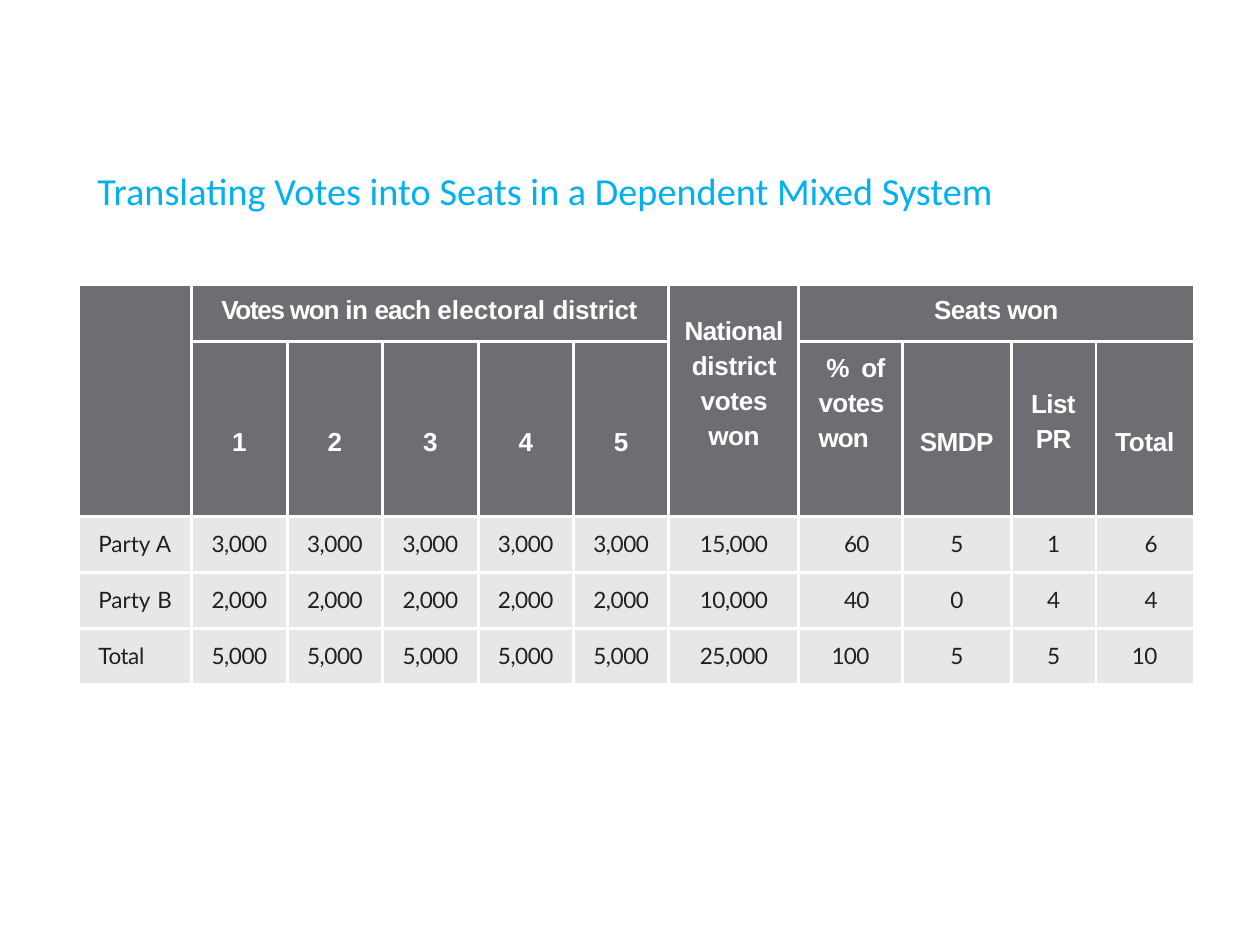
"""Build a slide with a table that translates votes into seats."""
from dataclasses import dataclass

from lxml import etree
from pptx import Presentation
from pptx import util as u
from pptx.dml.color import RGBColor
from pptx.enum import text
from pptx.oxml import ns

COLORS = {
    "title": "00B0F0",
    "header": "6D6E71",
    "header_text": "FFFFFF",
    "body": "E6E7E8",
    "body_text": "231F20",
    "border": "FFFFFF",
}
LEFT, CENTER, JUSTIFY = text.PP_ALIGN.LEFT, text.PP_ALIGN.CENTER, text.PP_ALIGN.JUSTIFY
COLUMN_WIDTHS = [1.14, *[0.97] * 5, 1.32, 1.05, 1.11, 0.86, 0.99]
ROW_HEIGHTS = [0.56, 1.77, 0.57, 0.57, 0.56]
NO_STYLE_ID = "{2D5ABB26-0587-4C30-8999-92F81FD0307C}"
HEADER_FONT = {"font": "Arial", "size": 7.5, "color": "header_text", "bold": True}
BODY_FONT = {"font": "Lato", "size": 6.5, "color": "body_text"}
LOW_TOP = 0.88

Runs = tuple[tuple[str, float], ...]


@dataclass(frozen=True)
class TableCell:
    row: int
    column: int
    runs: Runs
    top: float
    align: text.PP_ALIGN = CENTER
    row_span: int = 1
    column_span: int = 1
    left: float = 0
    right: float = 0
    indent: float = 0
    line_spacing: float = 1.0


HEADER_CELLS = [
    TableCell(0, 0, (), 0, row_span=2),
    TableCell(0, 1, (("Votes won ", -0.4), ("in ", -0.2), ("each ", -0.3),
                     ("electoral ", 0), ("district", -0.1)),
              0.1, LEFT, column_span=5, left=0.3),
    TableCell(0, 6, (("National", -0.2), (" district votes ", -0.1), ("won", -0.2)),
              0.25, row_span=2, left=0.15, right=0.15, line_spacing=1.2),
    TableCell(0, 7, (("Seats won", -0.2),), 0.1, column_span=4),
    *[TableCell(1, number, ((str(number), -0.5),), LOW_TOP) for number in range(1, 6)],
    TableCell(1, 7, (("% of votes ", -0.2), ("won", -0.3)), 0.07, JUSTIFY,
              left=0.2, right=0.18, indent=0.08, line_spacing=1.2),
    TableCell(1, 8, (("SMDP", -0.2),), LOW_TOP),
    TableCell(1, 9, (("List PR", -0.2),), 0.43, LEFT,
              left=0.25, indent=-0.05, line_spacing=1.2),
    TableCell(1, 10, (("Total", -0.1),), LOW_TOP),
]
BODY_ROWS: list[tuple[Runs, list[str]]] = [
    ((("Party ", 0), ("A", -0.5)), ["3,000"] * 5 + ["15,000", "60", "5", "1", "6"]),
    ((("Party", 0), (" B", 0.3)), ["2,000"] * 5 + ["10,000", "40", "0", "4", "4"]),
    ((("Total", -0.1),), ["5,000"] * 5 + ["25,000", "100", "5", "5", "10"]),
]
SPACING_BY_LENGTH = {1: -0.5, 2: -0.2, 3: -0.2}


def write(paragraph, content: str, *, font: str, size: float, color: str,
          bold: bool = False, spacing: float = 0) -> None:
    run = paragraph.add_run()
    run.text = content
    run.font.name = font
    run.font.size = u.Pt(size)
    run.font.bold = bold
    run.font.color.rgb = RGBColor.from_string(COLORS[color])
    if spacing:
        run._r.get_or_add_rPr().set("spc", str(round(spacing * 100)))


def body_cells() -> list[TableCell]:
    cells = []
    for row, (label, values) in enumerate(BODY_ROWS, start=2):
        cells.append(TableCell(row, 0, label, 0.15, LEFT, left=0.19))
        for column, value in enumerate(values, start=1):
            aligned = column in (7, 10) and row < 4
            spacing = SPACING_BY_LENGTH.get(len(value), -0.1)
            cells.append(TableCell(row, column, ((value, spacing),), 0.15,
                                   left=0.13 if aligned else 0))
    return cells


def add_borders(cell, item: TableCell) -> None:
    inner_sides = {
        "lnL": item.column > 0,
        "lnR": item.column + item.column_span < len(COLUMN_WIDTHS),
        "lnT": item.row > 0,
        "lnB": item.row + item.row_span < len(ROW_HEIGHTS),
    }
    properties = cell._tc.get_or_add_tcPr()
    for side, inner in inner_sides.items():
        if inner:
            line = etree.SubElement(properties, ns.qn(f"a:{side}"), w=str(u.Pt(1)))
            fill = etree.SubElement(line, ns.qn("a:solidFill"))
            etree.SubElement(fill, ns.qn("a:srgbClr"), val=COLORS["border"])


def fill_cell(table, item: TableCell, fill: str, run_format: dict) -> None:
    cell = table.cell(item.row, item.column)
    if item.row_span > 1 or item.column_span > 1:
        cell.merge(table.cell(item.row + item.row_span - 1,
                              item.column + item.column_span - 1))
    cell.margin_left = cell.margin_right = cell.margin_bottom = 0
    cell.margin_top = u.Cm(item.top)
    add_borders(cell, item)
    cell.fill.solid()
    cell.fill.fore_color.rgb = RGBColor.from_string(COLORS[fill])
    paragraph = cell.text_frame.paragraphs[0]
    paragraph.alignment = item.align
    paragraph.line_spacing = item.line_spacing
    properties = paragraph._p.get_or_add_pPr()
    for name, length in (("marL", item.left), ("marR", item.right), ("indent", item.indent)):
        properties.set(name, str(u.Cm(length)))
    for content, spacing in item.runs:
        write(paragraph, content, spacing=spacing, **run_format)


def add_title(slide) -> None:
    title = slide.shapes.add_textbox(u.Cm(0.99), u.Cm(1.67), u.Cm(9.6), u.Cm(0.51))
    frame = title.text_frame
    frame.word_wrap = True
    frame.margin_left = frame.margin_right = frame.margin_bottom = 0
    frame.margin_top = u.Cm(0.03)
    write(frame.paragraphs[0], "Translating Votes into Seats in a Dependent Mixed System",
          font="Calibri", size=11, color="title")


def add_seat_table(slide) -> None:
    shape = slide.shapes.add_table(len(ROW_HEIGHTS), len(COLUMN_WIDTHS), u.Cm(0.81), u.Cm(2.91),
                                   u.Cm(sum(COLUMN_WIDTHS)), u.Cm(sum(ROW_HEIGHTS)))
    table = shape.table
    table._tbl.tblPr.find(ns.qn("a:tableStyleId")).text = NO_STYLE_ID
    table.first_row = table.horz_banding = False
    for column, width in zip(table.columns, COLUMN_WIDTHS):
        column.width = u.Cm(width)
    for row, height in zip(table.rows, ROW_HEIGHTS):
        row.height = u.Cm(height)
    for item in HEADER_CELLS:
        fill_cell(table, item, "header", HEADER_FONT)
    for item in body_cells():
        fill_cell(table, item, "body", BODY_FONT)


def main() -> None:
    presentation = Presentation()
    presentation.slide_width = u.Pt(363)
    presentation.slide_height = u.Pt(272.5)
    slide = presentation.slides.add_slide(presentation.slide_layouts[6])
    add_title(slide)
    add_seat_table(slide)
    presentation.save("out.pptx")


if __name__ == "__main__":
    main()
